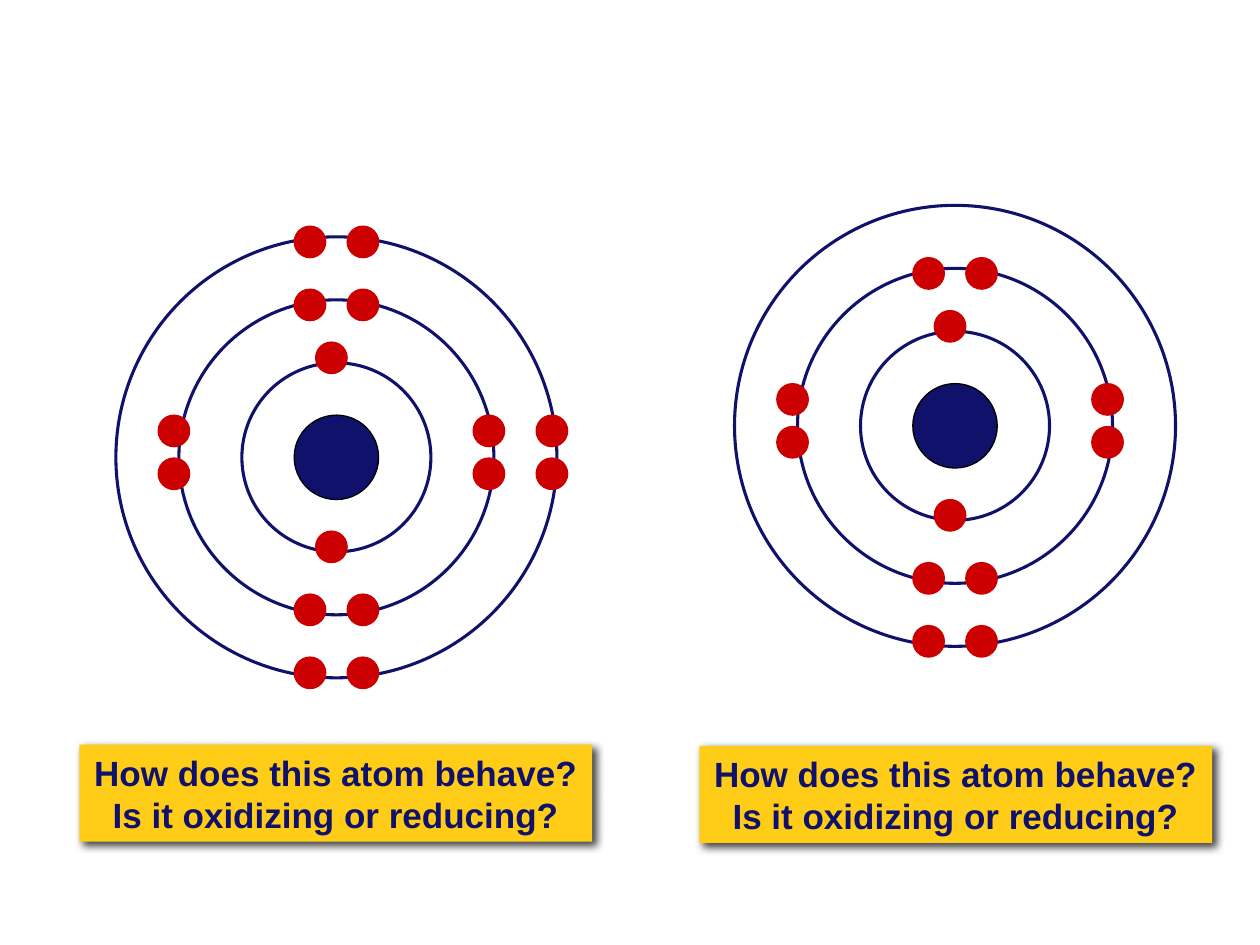
from lxml import etree
from pptx import Presentation
from pptx import util as u
from pptx.dml.color import RGBColor
from pptx.enum import shapes, text
from pptx.oxml import ns

THEME = {
    "navy": RGBColor.from_string("0F116A"),
    "red": RGBColor.from_string("CC0000"),
    "black": RGBColor.from_string("000000"),
    "yellow": RGBColor.from_string("FFCC18"),
    "font": "Arial",
    "question_size": u.Pt(20),
    "thin": u.Pt(0.75),
    "ring": u.Pt(1.75),
}
NUCLEUS_SIZE, ELECTRON_SIZE = 0.67, 0.25
SHELL_RADII = (0.75, 1.25, 1.75)


def add_circle(group, x, y, size, line, width, fill=None):
    """Add a circle centred on x, y."""
    circle = group.shapes.add_shape(
        shapes.MSO_SHAPE.OVAL, u.Inches(x - size / 2), u.Inches(y - size / 2),
        u.Inches(size), u.Inches(size))
    circle.shadow.inherit = False
    circle.line.color.rgb = line
    circle.line.width = width
    if fill is None:
        circle.fill.background()
    else:
        circle.fill.solid()
        circle.fill.fore_color.rgb = fill


def add_question(slide, lines, *, left, top, width, height, size, color, fill):
    """Add a filled, shadowed box with one centred paragraph per line."""
    box = slide.shapes.add_textbox(
        u.Inches(left), u.Inches(top), u.Inches(width), u.Inches(height))
    box.fill.solid()
    box.fill.fore_color.rgb = fill
    frame = box.text_frame
    frame.word_wrap = False
    frame.auto_size = text.MSO_AUTO_SIZE.SHAPE_TO_FIT_TEXT
    frame.vertical_anchor = text.MSO_ANCHOR.MIDDLE
    frame.text = "\n".join(lines)
    for paragraph in frame.paragraphs:
        paragraph.alignment = text.PP_ALIGN.CENTER
        font = paragraph.runs[0].font
        font.name, font.size, font.bold = THEME["font"], size, True
        font.color.rgb = color
    # Soft shadow towards the lower right
    effects = etree.SubElement(box._element.spPr, ns.qn("a:effectLst"))
    shadow = etree.SubElement(
        effects, ns.qn("a:outerShdw"), blurRad=str(u.Pt(5)), dist=str(u.Pt(3)),
        dir=str(45 * 60000), algn="tl", rotWithShape="0")
    shade = etree.SubElement(shadow, ns.qn("a:srgbClr"), val=str(THEME["black"]))
    etree.SubElement(shade, ns.qn("a:alpha"), val="75000")


presentation = Presentation()
presentation.slide_width, presentation.slide_height = u.Inches(10), u.Inches(7.5)
slide = presentation.slides.add_slide(presentation.slide_layouts[6])

# Each atom: centre, sides of every shell that hold electrons, question position
atoms = [
    (2.67, 3.63, ("pair", "top bottom left right", "top bottom right"), 0.63, 5.91),
    (7.58, 3.38, ("pair", "top bottom left right", "bottom"), 5.55, 5.92),
]

for center_x, center_y, shells, question_left, question_top in atoms:
    # Nucleus
    atom = slide.shapes.add_group_shape()
    add_circle(atom, center_x, center_y, NUCLEUS_SIZE,
               THEME["black"], THEME["thin"], THEME["navy"])

    # Shells from the inside out, each followed by its electrons
    for radius, sides in zip(SHELL_RADII, shells):
        add_circle(atom, center_x, center_y, 2 * radius, THEME["navy"], THEME["ring"])
        inner = radius - 0.04
        outer = radius + 0.04
        places = {
            "pair": [(-0.04, -outer), (-0.04, inner)],
            "top": [(-0.21, -inner), (0.21, -inner)],
            "bottom": [(-0.21, inner), (0.21, inner)],
            "left": [(-outer, -0.21), (-outer, 0.13)],
            "right": [(inner, -0.21), (inner, 0.13)],
        }
        for side in sides.split():
            for dx, dy in places[side]:
                add_circle(atom, center_x + dx, center_y + dy, ELECTRON_SIZE,
                           THEME["red"], THEME["thin"], THEME["red"])

    # Question under the atom
    add_question(
        slide, ["How does this atom behave?", "Is it oxidizing or reducing?"],
        left=question_left, top=question_top, width=4.07, height=0.77,
        size=THEME["question_size"], color=THEME["navy"], fill=THEME["yellow"])

presentation.save("out.pptx")
